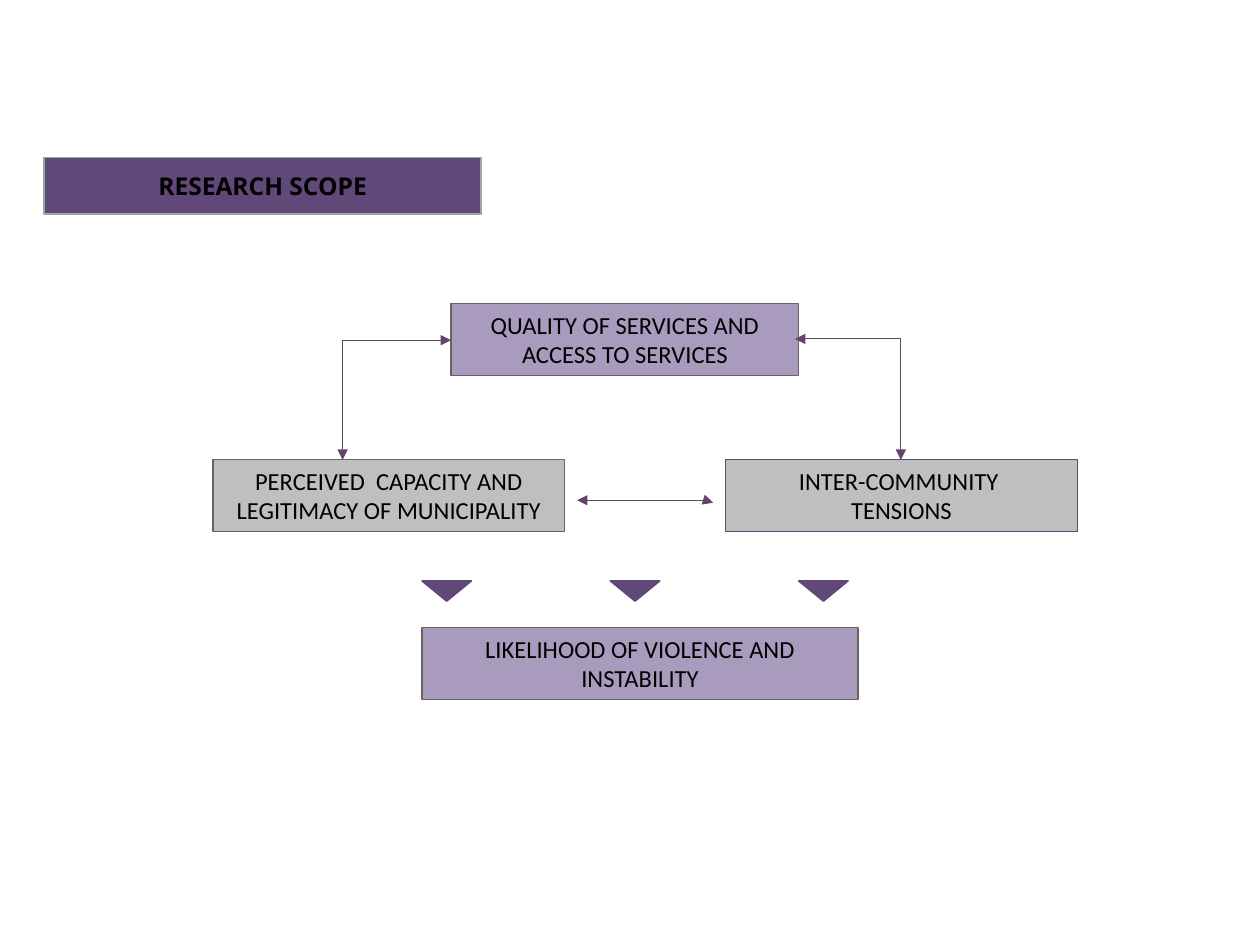
from dataclasses import dataclass

from lxml import etree
from pptx import Presentation
from pptx.dml.color import RGBColor
from pptx.enum.shapes import MSO_CONNECTOR, MSO_SHAPE
from pptx.enum.text import MSO_ANCHOR, MSO_AUTO_SIZE, PP_ALIGN
from pptx.oxml.ns import qn
from pptx.util import Inches, Pt

RECTANGLE = MSO_SHAPE.RECTANGLE
TRIANGLE = MSO_SHAPE.ISOSCELES_TRIANGLE
ELBOW = MSO_CONNECTOR.ELBOW
CENTER = PP_ALIGN.CENTER
TOP, MIDDLE = MSO_ANCHOR.TOP, MSO_ANCHOR.MIDDLE
GROW, NO_FIT = MSO_AUTO_SIZE.SHAPE_TO_FIT_TEXT, MSO_AUTO_SIZE.NONE
TITLE_ONLY = 5


@dataclass(frozen=True)
class Theme:
    purple: str = "604878"
    lilac: str = "A99BBD"
    gray: str = "BFBFBF"
    outline: str = "656565"
    title_outline: str = "9AA7A1"
    arrow: str = "64456A"
    text: str = "000000"
    body_font: str = "Calibri"
    title_font: str = "Open Sans"
    size: int = 14


THEME = Theme()
BOX_HEIGHT = 0.57


def paint(shape, fill, line, width):
    shape.fill.solid()
    shape.fill.fore_color.rgb = RGBColor.from_string(fill)
    shape.line.color.rgb = RGBColor.from_string(line)
    shape.line.width = Pt(width)


def write(frame, lines, font, bold=False):
    for index, line in enumerate(lines):
        paragraph = frame.add_paragraph() if index else frame.paragraphs[0]
        paragraph.alignment = CENTER
        run = paragraph.add_run()
        run.text = line
        run.font.name = font
        run.font.size = Pt(THEME.size)
        run.font.bold = bold
        run.font.color.rgb = RGBColor.from_string(THEME.text)


def set_title(slide, text):
    title = slide.shapes.title
    title.left, title.top = Inches(0.35), Inches(1.25)
    title.width, title.height = Inches(3.47), Inches(0.45)
    paint(title, THEME.purple, THEME.title_outline, 1)
    title.text_frame.auto_size = NO_FIT
    title.text_frame.vertical_anchor = MIDDLE
    write(title.text_frame, [text], THEME.title_font, bold=True)


def add_factor(slide, left, top, width, lines, fill, line=THEME.outline):
    box = slide.shapes.add_shape(
        RECTANGLE, Inches(left), Inches(top), Inches(width), Inches(BOX_HEIGHT))
    box.shadow.inherit = False
    paint(box, fill, line, 0.75)
    frame = box.text_frame
    frame.word_wrap = True
    frame.auto_size = GROW
    frame.vertical_anchor = TOP
    write(frame, lines, THEME.body_font)


def add_two_way_arrow(slide, start, end, bend=None):
    """Single-corner arrow, or a step at the given share of its width."""
    points = [Inches(value) for value in (*start, *end)]
    arrow = slide.shapes.add_connector(ELBOW, *points)
    arrow.line.color.rgb = RGBColor.from_string(THEME.arrow)
    arrow.line.width = Pt(0.5)
    properties = arrow.element.spPr
    geometry = properties.find(qn("a:prstGeom"))
    if bend is None:
        geometry.set("prst", "bentConnector2")
    else:
        guide = etree.SubElement(geometry.find(qn("a:avLst")), qn("a:gd"))
        guide.set("name", "adj1")
        guide.set("fmla", f"val {round(bend * 100000)}")
    line = properties.find(qn("a:ln"))
    for tag in ("a:headEnd", "a:tailEnd"):
        etree.SubElement(line, qn(tag)).set("type", "triangle")
    etree.SubElement(properties, qn("a:effectLst"))


def add_down_marker(slide, left):
    marker = slide.shapes.add_shape(
        TRIANGLE, Inches(left), Inches(4.61), Inches(0.39), Inches(0.16))
    marker.rotation = 180
    marker.shadow.inherit = False
    paint(marker, THEME.purple, THEME.purple, 1)


def main():
    presentation = Presentation()
    presentation.slide_width, presentation.slide_height = Inches(10), Inches(7.5)
    slide = presentation.slides.add_slide(presentation.slide_layouts[TITLE_ONLY])
    set_title(slide, "RESEARCH SCOPE")

    # Factors and their outcome
    add_factor(slide, 3.58, 2.41, 2.76,
               ["QUALITY OF SERVICES AND ACCESS TO SERVICES"], THEME.lilac)
    add_factor(slide, 3.35, 4.98, 3.46,
               ["LIKELIHOOD OF VIOLENCE AND INSTABILITY"], THEME.lilac)
    add_factor(slide, 5.76, 3.65, 2.79,
               ["INTER-COMMUNITY ", "TENSIONS"], THEME.gray, THEME.purple)
    add_factor(slide, 1.69, 3.65, 2.79,
               ["PERCEIVED  CAPACITY AND LEGITIMACY OF MUNICIPALITY"], THEME.gray)

    # Mutual influence between the factors
    add_two_way_arrow(slide, (6.31, 2.69), (7.15, 3.65))
    add_two_way_arrow(slide, (3.58, 2.7), (2.72, 3.65))
    add_two_way_arrow(slide, (4.58, 3.97), (5.66, 3.99), bend=0.95)

    # Markers leading down to the outcome
    for column in range(3):
        add_down_marker(slide, 3.35 + 1.495 * column)

    presentation.save("out.pptx")


if __name__ == "__main__":
    main()
